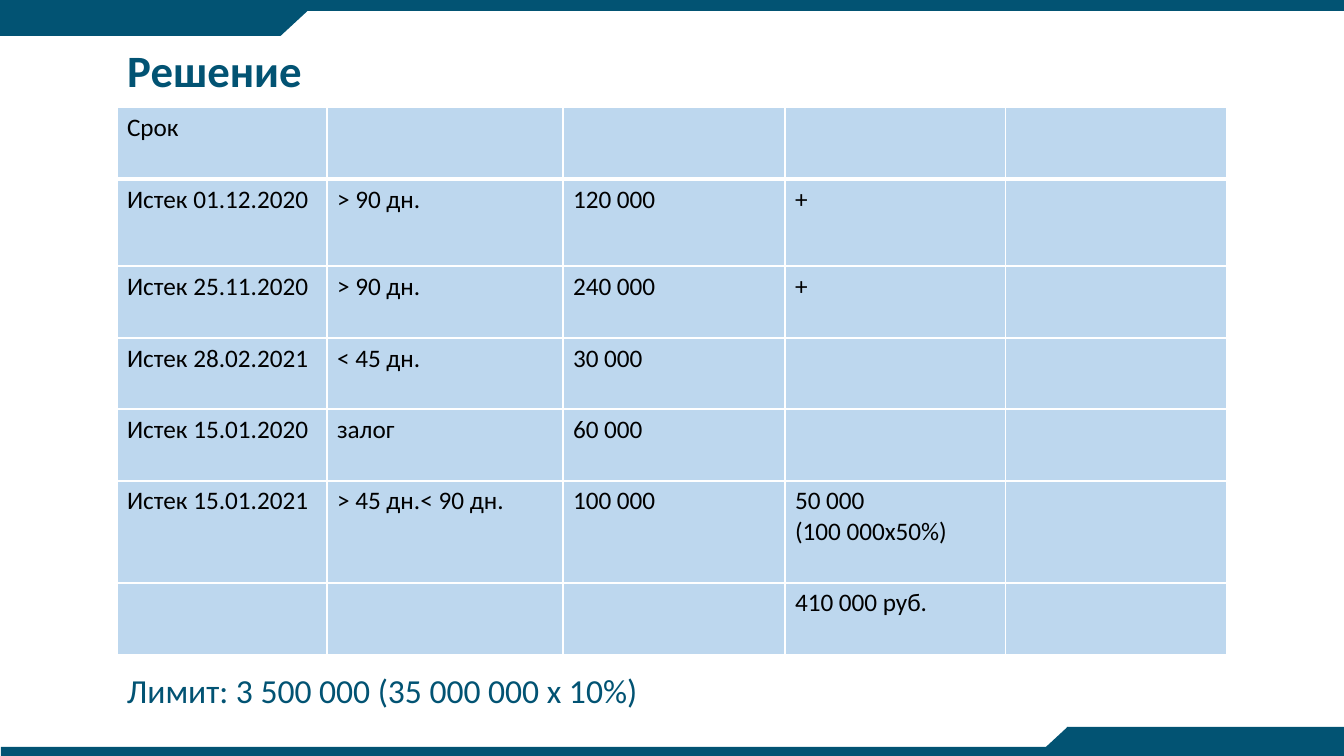
from typing import NamedTuple

from lxml.etree import SubElement
from pptx import Presentation
from pptx.dml.color import RGBColor
from pptx.enum.shapes import MSO_SHAPE as Shape
from pptx.enum.text import MSO_ANCHOR as Anchor, MSO_AUTO_SIZE as AutoSize, PP_ALIGN as Align
from pptx.oxml.ns import qn
from pptx.util import Emu, Pt

EMU_PER_INCH, PX_PER_INCH = 914400, 100.8
COLORS = {"brand": "025373", "cell": "BDD7EE", "border": "FFFFFF", "text": "000000"}
FONT = "Calibri"


class Band(NamedTuple):
    shape: Shape
    x: int
    y: int
    w: int
    h: int
    rotation: int = 0


BANDS = [
    Band(Shape.RECTANGLE, 0, 0, 1344, 11),
    Band(Shape.RECTANGLE, 1, 747, 1344, 11),
    Band(Shape.RECTANGLE, 0, 5, 280, 31),
    Band(Shape.FLOWCHART_MERGE, 247, 5, 67, 31),
    Band(Shape.RECTANGLE, 1067, 727, 280, 31),
    Band(Shape.FLOWCHART_MERGE, 1034, 727, 67, 31, 180),
]

COL_WIDTHS = [210, 236, 222, 221, 221]
ROW_HEIGHTS = [72, 87, 72, 71, 72, 102, 72]
ROWS = [
    ["Срок", "", "", "", ""],
    ["Истек 01.12.2020", "> 90 дн.", "120 000", "+", ""],
    ["Истек 25.11.2020", "> 90 дн.", "240 000", "+", ""],
    ["Истек 28.02.2021", "< 45 дн.", "30 000", "", ""],
    ["Истек 15.01.2020", "залог", "60 000", "", ""],
    ["Истек 15.01.2021", "> 45 дн.< 90 дн.", "100 000", "50 000\n(100 000x50%)", ""],
    ["", "", "", "410 000 руб.", ""],
]


def px(n: int) -> Emu:
    return Emu(round(n * EMU_PER_INCH / PX_PER_INCH))


def rgb(name: str) -> RGBColor:
    return RGBColor.from_string(COLORS[name])


def set_text(tf, text: str, *, size: int, color: str, bold: bool = False) -> None:
    tf.text = text
    for p in tf.paragraphs:
        p.alignment = Align.LEFT
        for r in p.runs:
            r.font.name, r.font.size, r.font.bold = FONT, Pt(size), bold
            r.font.color.rgb = rgb(color)


def add_band(s, band: Band) -> None:
    sp = s.shapes.add_shape(band.shape, px(band.x), px(band.y), px(band.w), px(band.h))
    sp.rotation = band.rotation
    sp.shadow.inherit = False
    sp.fill.solid()
    sp.fill.fore_color.rgb = rgb("brand")
    sp.line.fill.background()


def set_borders(cell, *, top: int = 1, bottom: int = 1) -> None:
    tc_pr = cell._tc.get_or_add_tcPr()
    for side, width in {"L": 1, "R": 1, "T": top, "B": bottom}.items():
        ln = SubElement(tc_pr, qn(f"a:ln{side}"), w=str(Pt(width)))
        fill = SubElement(ln, qn("a:solidFill"))
        SubElement(fill, qn("a:srgbClr"), val=COLORS["border"])


def add_terms_table(s, x: int, y: int) -> None:
    frame = s.shapes.add_table(len(ROWS), len(COL_WIDTHS), px(x), px(y),
                               px(sum(COL_WIDTHS)), px(sum(ROW_HEIGHTS)))
    table = frame.table
    for col, width in zip(table.columns, COL_WIDTHS):
        col.width = px(width)
    for i, (row, height) in enumerate(zip(table.rows, ROW_HEIGHTS)):
        row.height = px(height)
        for cell, text in zip(row.cells, ROWS[i]):
            set_borders(cell, top=3 if i == 1 else 1, bottom=3 if i == 0 else 1)
            cell.fill.solid()
            cell.fill.fore_color.rgb = rgb("cell")
            set_text(cell.text_frame, text, size=18, color="text")


def main() -> None:
    prs = Presentation()
    prs.slide_width, prs.slide_height = px(1344), px(756)
    s = prs.slides.add_slide(prs.slide_layouts[5])

    # Corner and edge bands
    for band in BANDS:
        add_band(s, band)

    # Title
    title = s.shapes.title
    title.left, title.top, title.width, title.height = px(117), px(0), px(1159), px(146)
    tf = title.text_frame
    tf.vertical_anchor = Anchor.MIDDLE
    set_text(tf, "Решение", size=32, color="brand", bold=True)
    tf.paragraphs[0].line_spacing = 0.9

    # Overdue terms table
    add_terms_table(s, 117, 107)

    # Limit
    limit = s.shapes.add_textbox(px(117), px(665), px(534), px(50))
    tf = limit.text_frame
    tf.word_wrap = False
    tf.auto_size = AutoSize.SHAPE_TO_FIT_TEXT
    set_text(tf, "Лимит: 3 500 000 (35 000 000 x 10%)", size=24, color="brand")

    prs.save("out.pptx")


if __name__ == "__main__":
    main()
